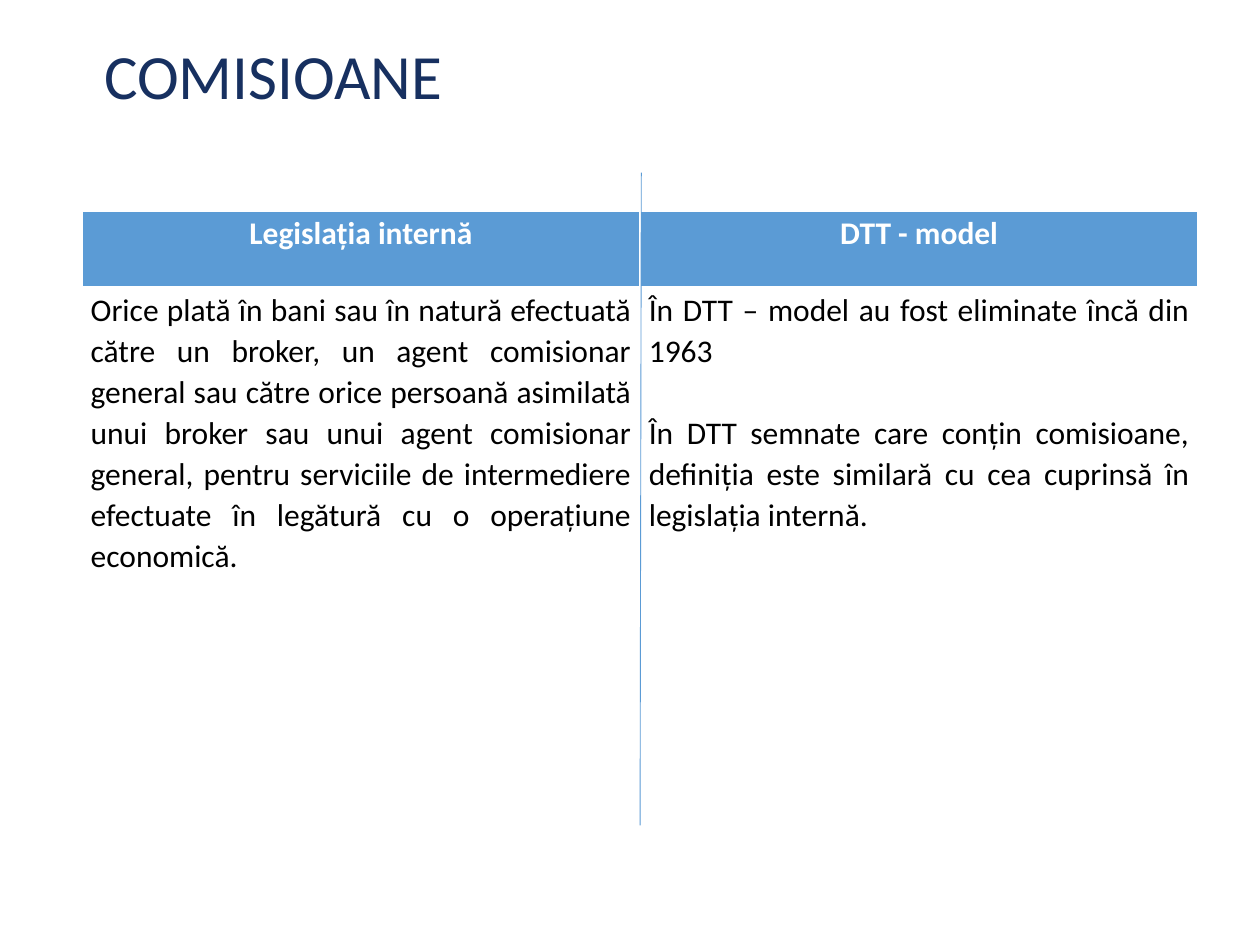
from lxml import etree
from pptx import Presentation, util as u
from pptx.dml.color import RGBColor
from pptx.enum import shapes, text
from pptx.oxml.ns import qn

BLUE, NAVY, WHITE, BLACK = "5B9BD5", "173060", "FFFFFF", "000000"
LEFT, MID, JUST = text.PP_ALIGN.LEFT, text.PP_ALIGN.CENTER, text.PP_ALIGN.JUSTIFY
HEADS = ["Legislația internă", "DTT - model"]
BODY = [
    ["Orice plată în bani sau în natură efectuată către un broker, un agent "
     "comisionar general sau către orice persoană asimilată unui broker sau "
     "unui agent comisionar general, pentru serviciile de intermediere "
     "efectuate în legătură cu o operațiune economică."],
    ["În DTT – model au fost eliminate încă din 1963",
     "În DTT semnate care conțin comisioane, definiția este similară cu cea "
     "cuprinsă în legislația internă."],
]


def color(code):
    return RGBColor.from_string(code)


class Deck:
    """Holds the style and the current slide, and adds each kind of element."""

    font = "Calibri"
    size = 18
    lead = 1.07
    gap = 23.5

    def __init__(self, wide, high):
        self.file = Presentation()
        self.file.slide_width = u.Inches(wide)
        self.file.slide_height = u.Inches(high)
        self.slide = self.file.slides.add_slide(self.file.slide_layouts[6])

    def fill_text(self, frame, lines, tint, size, align, lead, bold=False):
        frame.word_wrap = True
        for i, line in enumerate(lines):
            para = frame.add_paragraph() if i else frame.paragraphs[0]
            para.text = line
            para.alignment = align
            para.line_spacing = lead
            para.space_before = u.Pt(self.gap if i else 0)
            para.font.name = self.font
            para.font.size = u.Pt(size)
            para.font.bold = bold
            para.font.color.rgb = color(tint)

    def title(self, words, *box):
        frame = self.slide.shapes.add_textbox(*map(u.Inches, box)).text_frame
        frame.vertical_anchor = text.MSO_ANCHOR.MIDDLE
        self.fill_text(frame, [words], NAVY, 36, LEFT, 0.9)

    def edge(self, cell, base):
        props = cell._tc.get_or_add_tcPr()
        for side in "LRTB":
            width = base if side == "B" else 1
            line = etree.SubElement(props, qn(f"a:ln{side}"), w=str(u.Pt(width)))
            fill = etree.SubElement(line, qn("a:solidFill"))
            etree.SubElement(fill, qn("a:srgbClr"), val=WHITE)

    def cell(self, cell, lines, fill, tint, align, bold, base):
        cell.margin_left = cell.margin_right = u.Inches(0.07)
        cell.margin_top = cell.margin_bottom = 0
        self.edge(cell, base)
        cell.fill.solid()
        cell.fill.fore_color.rgb = color(fill)
        self.fill_text(cell.text_frame, lines, tint, self.size, align, self.lead, bold)

    def table(self, heads, body, rows, *box):
        grid = self.slide.shapes.add_table(
            len(rows), len(heads), *map(u.Inches, box)).table
        for row, high in zip(grid.rows, rows):
            row.height = u.Inches(high)
        for i, (head, lines) in enumerate(zip(heads, body)):
            self.cell(grid.cell(0, i), [head], BLUE, WHITE, MID, True, 3)
            self.cell(grid.cell(1, i), lines, WHITE, BLACK, JUST, False, 1)

    def rule(self, *ends):
        line = self.slide.shapes.add_connector(
            shapes.MSO_CONNECTOR.STRAIGHT, *map(u.Inches, ends))
        line.line.color.rgb = color(BLUE)
        line.line.width = u.Pt(0.5)
        etree.SubElement(line._element.spPr, qn("a:effectLst"))


def main():
    deck = Deck(10, 7.5)
    deck.title("COMISIOANE", 0.73, 0.18, 8.46, 0.89)
    deck.table(HEADS, BODY, [0.61, 3.84], 0.65, 1.68, 8.86, 4.45)
    deck.rule(5.09, 1.37, 5.08, 6.55)
    deck.file.save("out.pptx")


if __name__ == "__main__":
    main()
